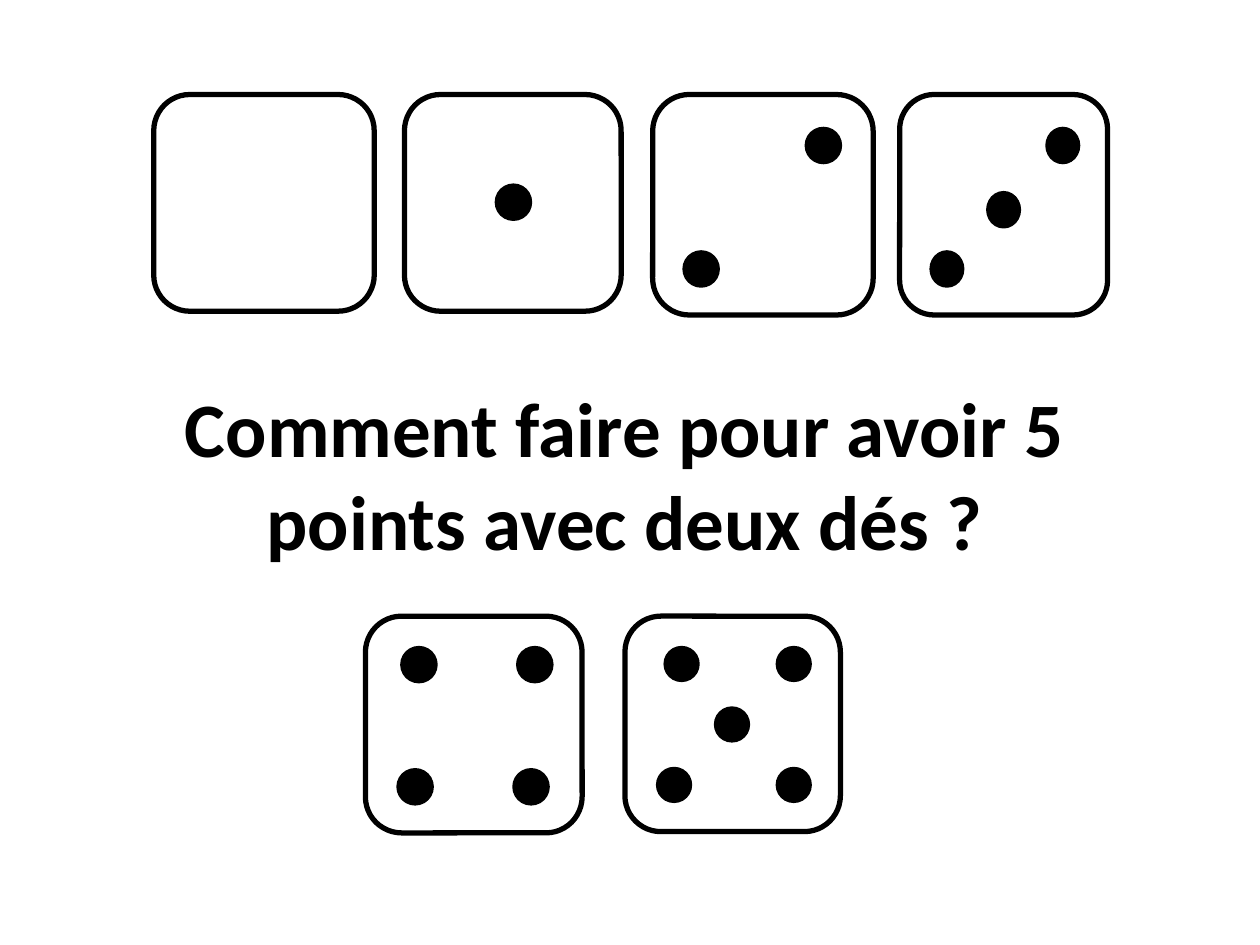
"""Slide asking how to score five points with two dice."""
from dataclasses import dataclass

from pptx import Presentation
from pptx.dml.color import RGBColor
from pptx.enum.shapes import MSO_SHAPE
from pptx.enum.text import MSO_ANCHOR, PP_ALIGN
from pptx.shapes.autoshape import Shape
from pptx.shapes.group import GroupShape
from pptx.slide import Slide
from pptx.text.text import TextFrame
from pptx.util import Inches, Pt


@dataclass(frozen=True)
class Theme:
    """Colours, font, type size and line widths."""
    ink: RGBColor = RGBColor(0, 0, 0)
    paper: RGBColor = RGBColor(255, 255, 255)
    font: str = "Calibri"
    title: int = 44
    edge: int = 3
    pip_edge: int = 2


@dataclass(frozen=True)
class Die:
    """A die face and the top-left corners of its pips, in inches."""
    left: float
    top: float
    width: float
    height: float
    pips: tuple[tuple[float, float], ...] = ()
    pip_width: float = 0.27
    pip_height: float = 0.27


THEME = Theme()
DICE = (
    Die(1.22, 0.75, 1.75, 1.72),
    Die(3.21, 0.75, 1.72, 1.72, ((3.94, 1.47),)),
    Die(5.18, 0.75, 1.75, 1.75, ((6.4, 1.02), (5.43, 2))),
    Die(7.14, 0.75, 1.65, 1.75, ((7.84, 1.53), (8.31, 1.02), (7.39, 2)), pip_width=0.25),
    Die(2.9, 4.89, 1.72, 1.72, ((4.11, 5.14), (3.16, 6.11), (3.19, 5.14), (4.08, 6.11))),
    Die(4.96, 4.89, 1.71, 1.71,
        ((5.68, 5.62), (6.17, 5.14), (5.22, 6.1), (5.28, 5.14), (6.17, 6.1)), 0.26, 0.26),
)


def set_text(tf: TextFrame, text: str, *, size: int, color: RGBColor, bold: bool = False,
             align: PP_ALIGN = PP_ALIGN.CENTER, anchor: MSO_ANCHOR = MSO_ANCHOR.MIDDLE) -> None:
    """Write one formatted paragraph into a text frame."""
    tf.word_wrap = True
    tf.vertical_anchor = anchor
    p = tf.paragraphs[0]
    p.alignment = align
    r = p.add_run()
    r.text = text
    r.font.name = THEME.font
    r.font.size = Pt(size)
    r.font.bold = bold
    r.font.color.rgb = color


def add_outlined(grp: GroupShape, kind: MSO_SHAPE, box: tuple[float, float, float, float],
                 fill: RGBColor, edge: int) -> Shape:
    """Add a filled shape with an ink outline to a group."""
    sp = grp.shapes.add_shape(kind, *map(Inches, box))
    sp.shadow.inherit = False
    sp.fill.solid()
    sp.fill.fore_color.rgb = fill
    sp.line.color.rgb = THEME.ink
    sp.line.width = Pt(edge)
    return sp


def draw_die(s: Slide, die: Die) -> None:
    """Draw a die face with its pips as one group."""
    grp = s.shapes.add_group_shape()
    face = (die.left, die.top, die.width, die.height)
    add_outlined(grp, MSO_SHAPE.ROUNDED_RECTANGLE, face, THEME.paper, THEME.edge)
    for x, y in die.pips:
        pip = (x, y, die.pip_width, die.pip_height)
        add_outlined(grp, MSO_SHAPE.OVAL, pip, THEME.ink, THEME.pip_edge)


def main() -> None:
    """Build and save the slide."""
    prs = Presentation()
    prs.slide_width, prs.slide_height = Inches(10), Inches(7.5)
    s = prs.slides.add_slide(prs.slide_layouts[0])
    subtitle = s.placeholders[1].element
    subtitle.getparent().remove(subtitle)
    title = s.shapes.title
    title.left, title.top, title.width, title.height = map(Inches, (0.71, 2.81, 8.5, 1.89))
    set_text(title.text_frame, "Comment faire pour avoir 5 points avec deux dés ?",
             size=THEME.title, color=THEME.ink, bold=True)
    for die in DICE:
        draw_die(s, die)
    prs.save("out.pptx")


if __name__ == "__main__":
    main()
